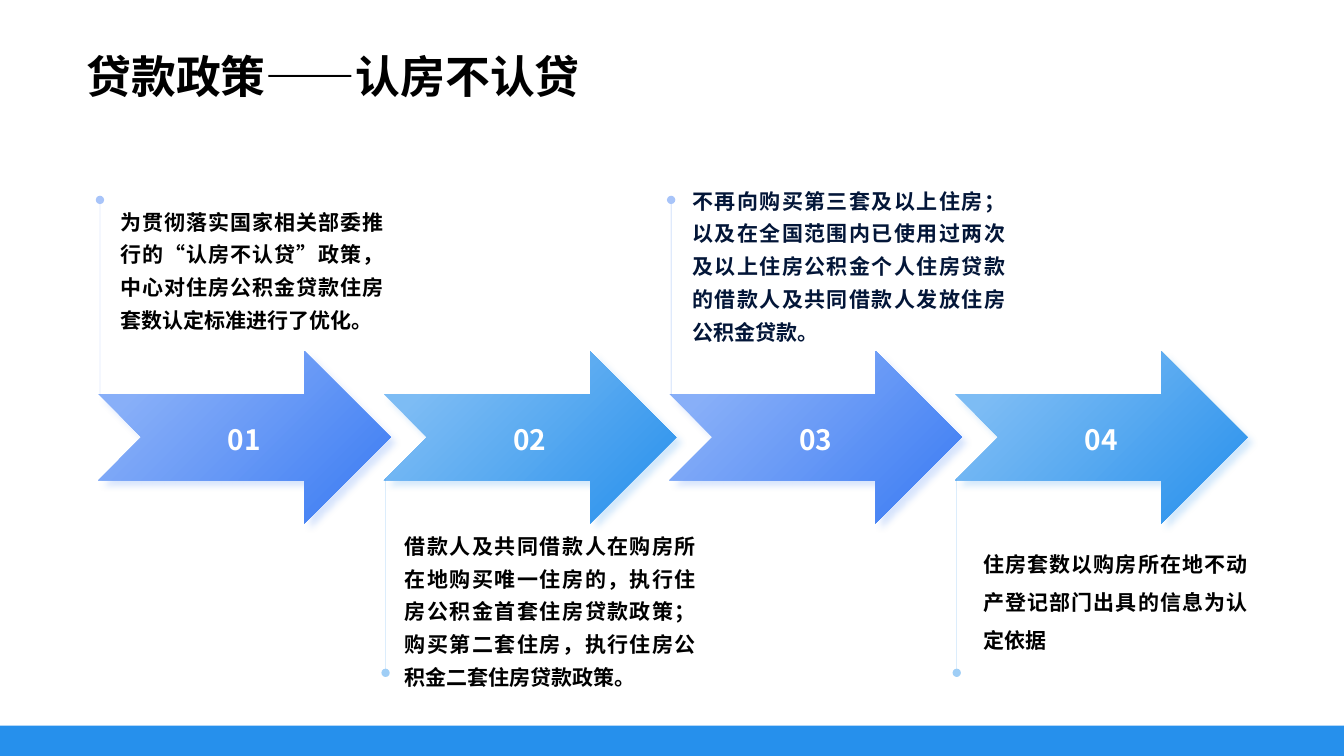
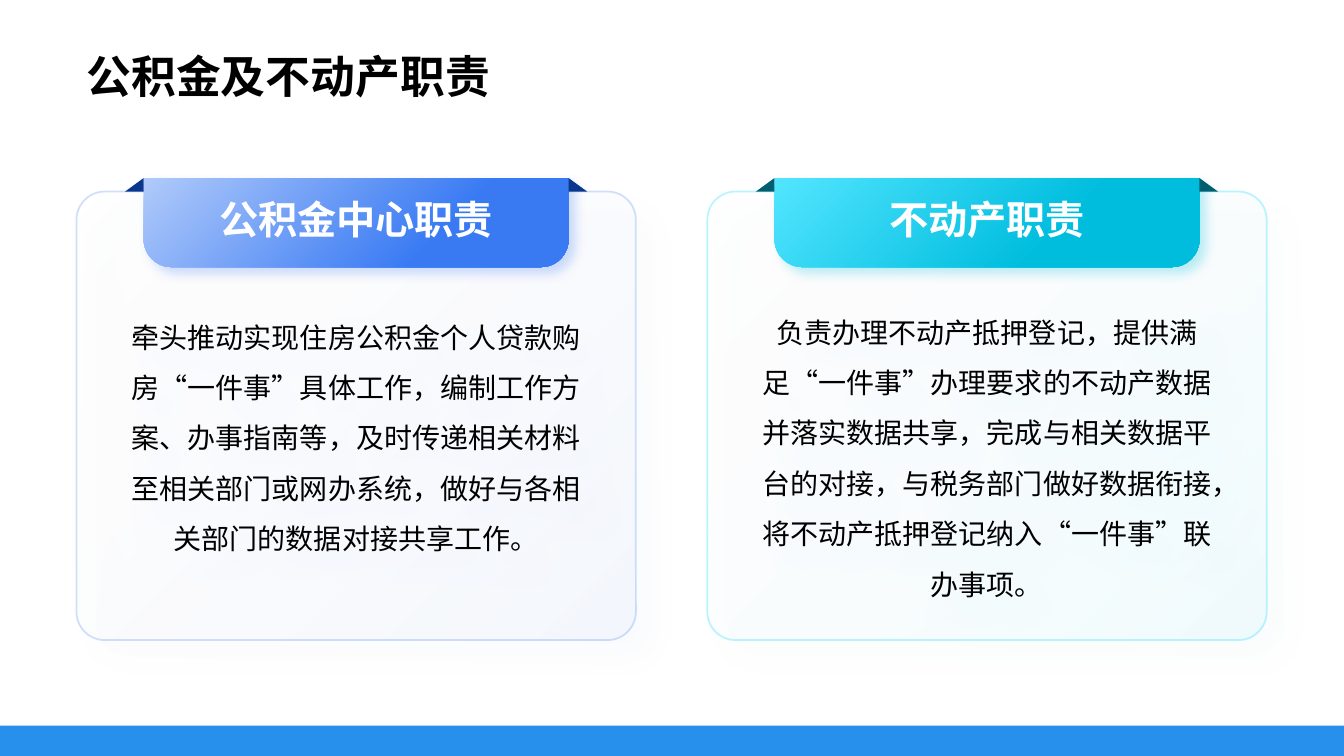
import pptx
import pptx.dml.color
import pptx.enum.lang
import pptx.enum.shapes
import pptx.enum.text
import pptx.oxml
import pptx.oxml.ns
import pptx.util

COLORS = {
    "white": "FFFFFF", "black": "000000", "navy": "031638",
    "blue": "397AF3", "arrow blue": "88AFF8", "light blue": "B0CAFA",
    "pale blue": "D7E4FD", "dark blue": "09378D",
    "sky": "2690EC", "light sky": "7DBCF4",
    "cyan": "00BDDE", "light cyan": "52E5FF", "line cyan": "8CEEFF",
    "pale cyan": "C5F6FF", "dark cyan": "005E6F",
}
FONT = "Noto Sans CJK SC"
SHAPES = pptx.enum.shapes.MSO_SHAPE
ALIGN = pptx.enum.text.PP_ALIGN
MIDDLE = pptx.enum.text.MSO_ANCHOR.MIDDLE
FIT = pptx.enum.text.MSO_AUTO_SIZE
COLUMNS, ROWS = 160, 90
WIDTH, HEIGHT = pptx.util.Inches(13.33), pptx.util.Inches(7.5)
qn = pptx.oxml.ns.qn


def across(columns):
    """Turn grid columns into a length."""
    return round(WIDTH * columns / COLUMNS)


def down(rows):
    """Turn grid rows into a length."""
    return round(HEIGHT * rows / ROWS)


def margins(left, top, right, bottom):
    """Name the insets of a text frame, given in inches."""
    sides = ("left", "top", "right", "bottom")
    return {f"margin_{side}": pptx.util.Inches(inset)
            for side, inset in zip(sides, (left, top, right, bottom))}


def assign(target, values):
    """Set each attribute of the target from a dict."""
    for name, value in values.items():
        setattr(target, name, value)


def rgb(color):
    """Look up a named colour."""
    return pptx.dml.color.RGBColor.from_string(COLORS[color])


def node(markup):
    """Parse one drawing element."""
    opening, rest = markup.split(" ", 1)
    return pptx.oxml.parse_xml(f"{opening} {pptx.oxml.ns.nsdecls('a')} {rest}")


def color_markup(color, opacity):
    """Spell out a colour with its opacity in percent."""
    return (f'<a:srgbClr val="{COLORS[color]}">'
            f'<a:alpha val="{opacity * 1000}"/></a:srgbClr>')


def tint(element, opacity):
    """Give the solid colour inside an element an opacity in percent."""
    color = next(element.iter(qn("a:srgbClr")))
    color.append(node(f'<a:alpha val="{opacity * 1000}"/>'))


class Deck:
    """Hold the shared style and the current slide."""

    def __init__(self):
        """Open a widescreen presentation."""
        self.deck = pptx.Presentation()
        assign(self.deck, {"slide_width": WIDTH, "slide_height": HEIGHT})
        self.layout = self.deck.slide_layouts[5]
        self.page = None

    def start(self, title):
        """Add a slide with its title, and the band to the layout at first."""
        self.page = self.deck.slides.add_slide(self.layout)
        if len(self.deck.slides) == 1:
            band = self.shape(SHAPES.RECTANGLE, (0, 86.4, COLUMNS, 3.6), "sky")
            self.layout.element.cSld.spTree.append(band.element)
        box = self.page.shapes.title
        assign(box, {"left": across(9.1), "top": down(4.7),
                     "width": across(141.8), "height": down(9.5)})
        self.label(box, title, 32, "black", name="Arial",
                   frame={"vertical_anchor": MIDDLE, "auto_size": FIT.NONE},
                   layout={"alignment": ALIGN.LEFT, "line_spacing": 0.9})

    def shape(self, kind, place, fill=None, adjust=()):
        """Add a plain shape at left, top, width, height in grid units."""
        left, top, width, height = place
        box = self.page.shapes.add_shape(
            kind, across(left), down(top), across(width), down(height))
        for index, value in enumerate(adjust):
            box.adjustments[index] = value
        box.shadow.inherit = False
        box.line.fill.background()
        if fill:
            box.fill.solid()
            box.fill.fore_color.rgb = rgb(fill)
        return box

    def gradient(self, box, stops, direction='<a:lin ang="2700000" scaled="0"/>'):
        """Fill a shape with stops of position, colour and opacity."""
        box.fill.background()
        marks = "".join(f'<a:gs pos="{position * 1000}">{color_markup(color, opacity)}</a:gs>'
                        for position, color, opacity in stops)
        properties = box.element.spPr
        properties.replace(properties.find(qn("a:noFill")), node(
            f'<a:gradFill rotWithShape="1"><a:gsLst>{marks}</a:gsLst>{direction}</a:gradFill>'))

    def shade(self, box, color, opacity, blur, distance):
        """Cast a soft shadow to the lower right."""
        box.element.spPr.find(qn("a:effectLst")).append(node(
            f'<a:outerShdw blurRad="{pptx.util.Pt(blur)}" dist="{pptx.util.Pt(distance)}" '
            f'dir="2700000" algn="tl" rotWithShape="0">'
            f'{color_markup(color, opacity)}</a:outerShdw>'))

    def label(self, box, text, size, color, bold=True, name=FONT, frame=None, layout=None):
        """Put one formatted paragraph in a shape."""
        assign(box.text_frame, frame or {})
        para = box.text_frame.paragraphs[0]
        assign(para, layout or {})
        span = para.add_run()
        span.text = text
        assign(span.font, {
            "size": pptx.util.Pt(size), "bold": bold, "name": name,
            "language_id": pptx.enum.lang.MSO_LANGUAGE_ID.SIMPLIFIED_CHINESE})
        span.font.color.rgb = rgb(color)
        span._r.get_or_add_rPr().append(node(f'<a:ea typeface="{FONT}"/>'))

    def note(self, left, top, width, text, color="black", spacing=1.3):
        """Add a justified text box that grows with its text."""
        box = self.page.shapes.add_textbox(
            across(left), down(top), across(width), down(8.9))
        self.label(box, text, 15, color,
                   frame={"word_wrap": True, "auto_size": FIT.SHAPE_TO_FIT_TEXT,
                          **margins(0, 0, 0, 0)},
                   layout={"alignment": ALIGN.JUSTIFY, "line_spacing": spacing})

    def arrow(self, left, text, light, strong):
        """Add a numbered step arrow."""
        box = self.shape(SHAPES.NOTCHED_RIGHT_ARROW, (left, 41.8, 34.8, 20.5))
        self.gradient(box, [(16, light, 100), (100, strong, 100)])
        self.shade(box, strong, 20, 5, 5)
        self.label(box, text, 20, "white",
                   frame={"word_wrap": False, "vertical_anchor": MIDDLE,
                          **margins(0.16, 0.08, 0.16, 0.04)},
                   layout={"alignment": ALIGN.CENTER})

    def leader(self, left, dot, end, color):
        """Add a thin vertical line that starts with a dot."""
        line = self.page.shapes.add_connector(
            pptx.enum.shapes.MSO_CONNECTOR.STRAIGHT,
            across(left), down(dot), across(left), down(end))
        line.line.width = pptx.util.Pt(0.25)
        line.line.color.rgb = rgb(color)
        properties = line.element.spPr
        outline = properties.find(qn("a:ln"))
        tint(outline, 44)
        outline.append(node('<a:headEnd type="oval"/>'))
        properties.append(node('<a:effectLst />'))

    def card(self, left, text, insets, pale, edge, strong):
        """Add a glassy card with body text."""
        place = (left, 22.8, 66.6, 53.4)
        glass = self.shape(SHAPES.ROUNDED_RECTANGLE, place, "white", (0.063,))
        tint(glass.element.spPr, 5)
        box = self.shape(SHAPES.ROUNDED_RECTANGLE, place, adjust=(0.063,))
        self.gradient(box, [(0, pale, 20), (100, "white", 0)],
                      '<a:path path="circle"><a:fillToRect l="100000" t="100000"/></a:path>')
        box.line.width = pptx.util.Pt(1.25)
        box.line.color.rgb = rgb(edge)
        tint(box.element.spPr.find(qn("a:ln")), 60)
        for layer in (glass, box):
            self.shade(layer, strong, 8, 22, 18)
        self.label(box, text, 20, "black", bold=False, name="Arial",
                   frame={"word_wrap": True, "vertical_anchor": MIDDLE, **margins(*insets)},
                   layout={"alignment": ALIGN.CENTER, "line_spacing": 1.5})

    def ribbon(self, left, text, light, strong, middle, fold):
        """Add a heading ribbon with a fold at each end."""
        top, width, fold_width = 21.2, 50.6, 2.2
        box = self.shape(SHAPES.ROUND_2_SAME_RECTANGLE, (left, top, width, 10.6),
                         adjust=(0, 0.314))
        self.gradient(box, [(0, light, 100), (middle, strong, 100), (100, strong, 100)])
        self.shade(box, strong, 25, 8, 6)
        self.label(box, text, 28, "white", frame={"vertical_anchor": MIDDLE},
                   layout={"alignment": ALIGN.CENTER})
        for fold_left, apex in ((left - fold_width, 1), (left + width, 0)):
            self.shape(SHAPES.ISOSCELES_TRIANGLE, (fold_left, top, fold_width, 1.6),
                       fold, (apex,))


def policy_page(deck):
    """Build the four policy steps."""
    deck.start("贷款政策——认房不认贷")
    notes = [
        (14.3, 24, 31.4, "为贯彻落实国家相关部委推行的“认房不认贷”政策，中心对住房公积金贷款住房套数认定标准进行了优化。"),
        (48.2, 62.6, 34.7, "借款人及共同借款人在购房所在地购买唯一住房的，执行住房公积金首套住房贷款政策；购买第二套住房，执行住房公积金二套住房贷款政策。"),
        (82.4, 21.5, 37.3, "不再向购买第三套及以上住房；以及在全国范围内已使用过两次及以上住房公积金个人住房贷款的借款人及共同借款人发放住房公积金贷款。", "navy"),
        (117.1, 64.2, 31.4, "住房套数以购房所在地不动产登记部门出具的信息为认定依据", "black", 1.5),
    ]
    styles = [("arrow blue", "blue", 23.8, 47), ("light sky", "sky", 80.1, 56.9)]
    for index, note in enumerate(notes):
        light, strong, dot, end = styles[index % 2]
        left = 11.7 + 34 * index
        deck.arrow(left, f"{index + 1:02}", light, strong)
        deck.leader(left + 0.2, dot, end, strong)
        deck.note(*note)


def duty_page(deck):
    """Build the two duty cards."""
    deck.start("公积金及不动产职责")
    duties = [
        ("公积金中心职责",
         "牵头推动实现住房公积金个人贷款购房“一件事”具体工作，编制工作方案、办事指南等，及时传递相关材料至相关部门或网办系统，做好与各相关部门的数据对接共享工作。",
         (0.37, 0.8, 0.37, 0.53), ("pale blue", "light blue", "blue"),
         ("light blue", "blue", 69, "dark blue")),
        ("不动产职责",
         "负责办理不动产抵押登记，提供满足“一件事”办理要求的不动产数据并落实数据共享，完成与相关数据平台的对接，与税务部门做好数据衔接，将不动产抵押登记纳入“一件事”联办事项。",
         (0.37, 0.95, 0.37, 0.28), ("pale cyan", "line cyan", "cyan"),
         ("light cyan", "cyan", 66, "dark cyan")),
    ]
    for index, (heading, text, insets, card_colors, ribbon_style) in enumerate(duties):
        left = 9.1 + 75.1 * index
        deck.card(left, text, insets, *card_colors)
        deck.ribbon(left + 8, heading, *ribbon_style)


def main():
    """Build and save the slides."""
    deck = Deck()
    policy_page(deck)
    duty_page(deck)
    deck.deck.save("out.pptx")


if __name__ == "__main__":
    main()
